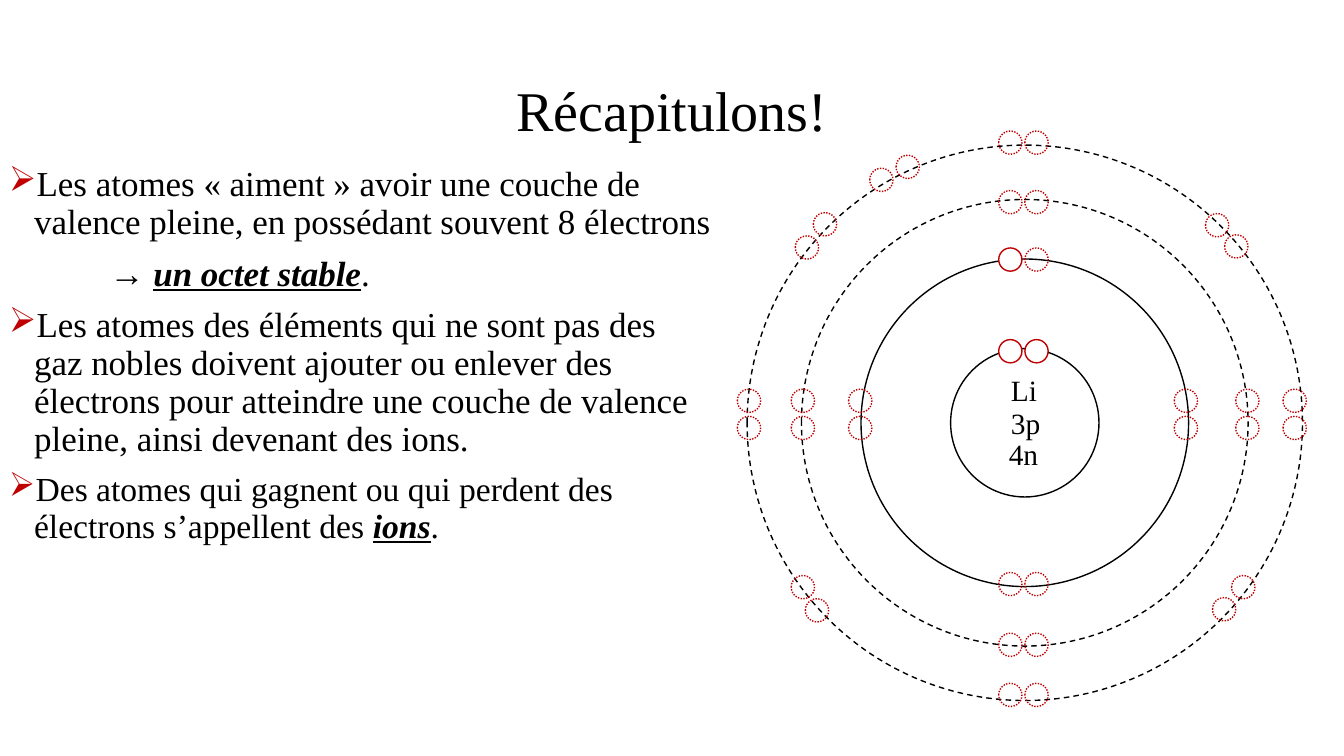
from lxml.etree import SubElement
from pptx import Presentation
from pptx.dml.color import RGBColor
from pptx.enum.dml import MSO_LINE
from pptx.enum.shapes import MSO_SHAPE
from pptx.enum.text import MSO_ANCHOR, PP_ALIGN
from pptx.oxml.ns import qn
from pptx.util import Pt

BLACK = RGBColor(0, 0, 0)
WHITE = RGBColor(255, 255, 255)
RED = RGBColor(0xC0, 0, 0)
FONT = "Times New Roman"
DASH, DOT = MSO_LINE.DASH, MSO_LINE.ROUND_DOT
STRONG = {"bold": True, "italic": True, "underline": True}

MID_X, MID_Y = 732, 302
SIZE = 16.6  # electron diameter
PAIR_X = (721.7, 740.4)
PAIR_Y = (286.3, 305.7)

# diameter, dash of the ring
RINGS = [(106, None), (234, None), (319, DASH), (396.7, DASH)]
# heights of the pairs above and below, then places of the side pairs
ROWS = [417.2, 144.4, 460.6, 101.9, 496.4]
COLS = [614.5, 847.1, 573.5, 891, 535, 924.8]
OUTER = [(576.4, 176.8), (589.3, 160.2), (869.4, 160.9), (883.1, 176),
         (573.5, 419.4), (583.6, 436), (888.1, 419.4), (874.4, 435.2),
         (629.6, 128.5), (648.4, 119.2)]
FILLED = [(PAIR_X[0], 250.9), (PAIR_X[1], 250.9), (PAIR_X[0], 185.4)]

LABELS = [("Li", 715, 262), ("3p", 715, 286), ("4n", 713.5, 308)]

# bulleted, size, runs
POINTS = [
    (True, 25, [("Les atomes « aiment » avoir une couche de valence pleine, "
                 "en possédant souvent 8 électrons", {})]),
    (False, 25, [("→ ", {}), ("un octet stable", STRONG), (".", {})]),
    (True, 25, [("Les atomes des éléments qui ne sont pas des gaz nobles "
                 "doivent ajouter ou enlever des électrons pour atteindre une "
                 "couche de valence pleine, ainsi devenant des ions.", {})]),
    (True, 24, [("Des atomes qui gagnent ou qui perdent des électrons "
                 "s’appellent des ", {}), ("ions", STRONG), (".", {})]),
]


def add_circle(slide, x, y, size, color, dash=None, fill=None):
    """Draw a circle around the centre x, y."""
    circle = slide.shapes.add_shape(
        MSO_SHAPE.OVAL, Pt(x - size / 2), Pt(y - size / 2), Pt(size), Pt(size))
    circle.shadow.inherit = False
    if fill is None:
        circle.fill.background()
    else:
        circle.fill.solid()
        circle.fill.fore_color.rgb = fill
    circle.line.color.rgb = color
    circle.line.width = Pt(1)
    if dash is not None:
        circle.line.dash_style = dash


def add_box(slide, x, y, width, height, wrap=True):
    box = slide.shapes.add_textbox(Pt(x), Pt(y), Pt(width), Pt(height))
    box.text_frame.word_wrap = wrap
    return box.text_frame


def add_run(para, text, size, style=None):
    run = para.add_run()
    run.text = text
    run.font.color.rgb = BLACK
    look = {"name": FONT, "size": Pt(size), **(style or {})}
    for key, value in look.items():
        setattr(run.font, key, value)


def set_indent(para, left, first):
    props = para._p.get_or_add_pPr()
    props.set("marL", str(Pt(left)))
    props.set("indent", str(Pt(first)))
    return props


def add_bullet(para):
    props = set_indent(para, 18, -18)
    color = SubElement(props, qn("a:buClr"))
    SubElement(color, qn("a:srgbClr")).set("val", str(RED))
    SubElement(props, qn("a:buChar")).set("char", "➢")


def add_title(slide, text):
    frame = add_box(slide, 66, 29, 828, 104.4)
    frame.vertical_anchor = MSO_ANCHOR.MIDDLE
    para = frame.paragraphs[0]
    para.alignment = PP_ALIGN.CENTER
    para.line_spacing = 0.9
    add_run(para, text, 40)


def add_points(slide):
    frame = add_box(slide, -0.7, 115.2, 516.2, 373)
    for i, (marked, size, runs) in enumerate(POINTS):
        para = frame.add_paragraph() if i else frame.paragraphs[0]
        para.line_spacing = 0.9
        if i:
            para.space_before = Pt(10)
        if marked:
            add_bullet(para)
        else:
            set_indent(para, 72, 0)
        for text, style in runs:
            add_run(para, text, size, style)


def add_atom(slide):
    for text, x, y in LABELS:
        frame = add_box(slide, x, y, 36, 32.4, wrap=False)
        add_run(frame.paragraphs[0], text, 21)
    for size, dash in RINGS:
        add_circle(slide, MID_X, MID_Y, size, BLACK, dash)
    for x, y in FILLED:
        add_circle(slide, x, y, SIZE, RED, fill=WHITE)
    spots = [(PAIR_X[1], 185.4)]
    spots += [(x, y) for y in ROWS for x in PAIR_X]
    spots += [(x, y) for x in COLS for y in PAIR_Y]
    for x, y in spots + OUTER:
        add_circle(slide, x, y, SIZE, RED, DOT)


def main():
    deck = Presentation()
    deck.slide_width, deck.slide_height = Pt(960), Pt(540)
    slide = deck.slides.add_slide(deck.slide_layouts[6])
    add_title(slide, "Récapitulons!")
    add_atom(slide)
    add_points(slide)
    deck.save("out.pptx")


if __name__ == "__main__":
    main()
